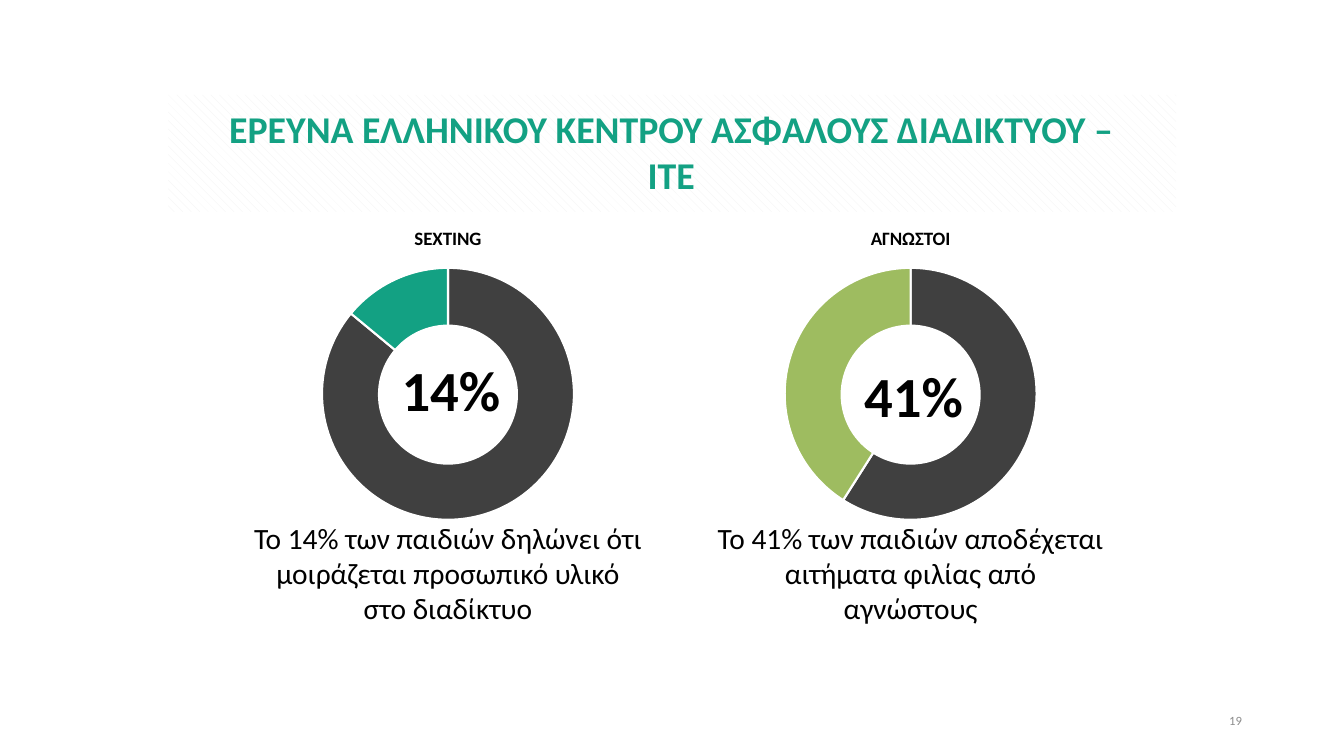
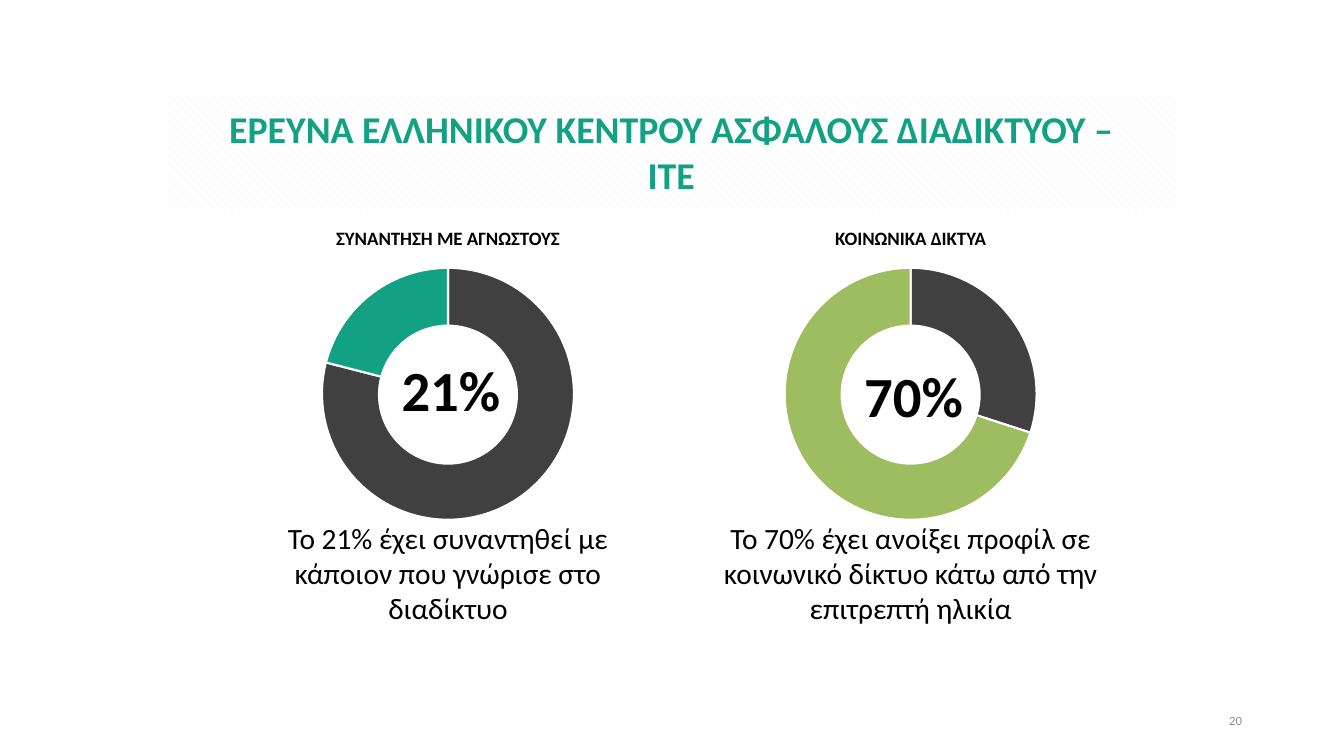
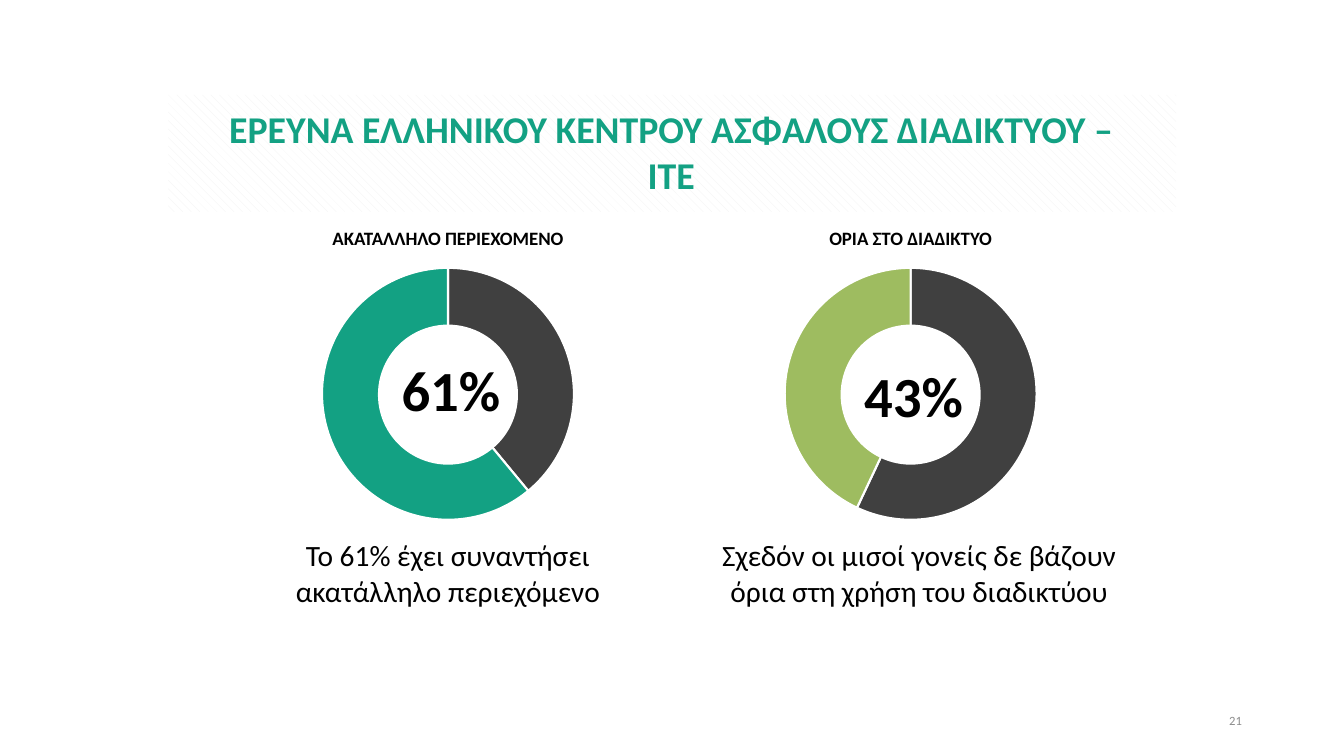
import dataclasses

import lxml.etree
import pptx
import pptx.chart.data
import pptx.dml.color
import pptx.enum.chart
import pptx.enum.dml
import pptx.enum.shapes
import pptx.enum.text
import pptx.oxml.ns
import pptx.util

Cm = pptx.util.Cm
Align = pptx.enum.text.PP_ALIGN
Anchor = pptx.enum.text.MSO_ANCHOR
Kind = pptx.enum.shapes.MSO_SHAPE

FONT = "Calibri"
BLACK, WHITE, DARK = "000000", "FFFFFF", "404040"
TEAL, GREEN, PALE, GREY = "13A183", "9EBC60", "F2F2F2", "8C8C8C"
TITLE = "ΕΡΕΥΝΑ ΕΛΛΗΝΙΚΟΥ ΚΕΝΤΡΟΥ ΑΣΦΑΛΟΥΣ ΔΙΑΔΙΚΤΥΟΥ – ΙΤΕ"
FIRST = 19
TEXT_W = 9.78
PIE_W, PIE_H, DISC, HOLE = 10.64, 7.09, 6.35, 3.53


@dataclasses.dataclass(frozen=True)
class Box:
    left: float
    top: float
    width: float
    height: float

    def place(self) -> tuple:
        return Cm(self.left), Cm(self.top), Cm(self.width), Cm(self.height)


@dataclasses.dataclass(frozen=True)
class Column:
    mid: float
    color: str
    label_top: float


@dataclasses.dataclass(frozen=True)
class Result:
    head: str
    share: int
    note: str
    lines: int = 3
    width: float = TEXT_W


COLUMNS = (Column(11.29, TEAL, 8.81), Column(22.95, GREEN, 8.97))
PAGES = (
    (Result("SEXTING", 14, "To 14% των παιδιών δηλώνει ότι μοιράζεται "
            "προσωπικό υλικό στο διαδίκτυο"),
     Result("ΑΓΝΩΣΤΟΙ", 41, "Το 41% των παιδιών αποδέχεται αιτήματα "
            "φιλίας από αγνώστους", lines=2)),
    (Result("ΣΥΝΑΝΤΗΣΗ ΜΕ ΑΓΝΩΣΤΟΥΣ", 21, "Το 21% έχει συναντηθεί με "
            "κάποιον που γνώρισε στο διαδίκτυο"),
     Result("ΚΟΙΝΩΝΙΚΑ ΔΙΚΤΥΑ", 70, "Το 70% έχει ανοίξει προφίλ σε "
            "κοινωνικό δίκτυο κάτω από την επιτρεπτή ηλικία")),
    (Result("ΑΚΑΤΑΛΛΗΛΟ ΠΕΡΙΕΧΟΜΕΝΟ", 61, "To 61% έχει συναντήσει "
            "ακατάλληλο περιεχόμενο", lines=2),
     Result("ΟΡΙΑ ΣΤΟ ΔΙΑΔΙΚΤΥΟ", 43, "Σχεδόν οι μισοί γονείς δε βάζουν "
            "όρια στη χρήση του διαδικτύου", lines=2, width=10.21)),
)


def rgb(color: str) -> pptx.dml.color.RGBColor:
    return pptx.dml.color.RGBColor.from_string(color)


def style_font(font, size: float, color: str, bold: bool = False) -> None:
    font.name, font.size, font.bold = FONT, pptx.util.Pt(size), bold
    font.color.rgb = rgb(color)


def write(shape, text: str, size: float, color: str = BLACK,
          bold: bool = False, align=Align.CENTER, anchor=Anchor.TOP,
          inset: bool = False) -> None:
    frame = shape.text_frame
    frame.text = text
    frame.word_wrap = True
    frame.auto_size = pptx.enum.text.MSO_AUTO_SIZE.NONE
    frame.vertical_anchor = anchor
    if not inset:
        frame.margin_left = frame.margin_right = 0
        frame.margin_top = frame.margin_bottom = 0
    line = frame.paragraphs[0]
    line.alignment = align
    style_font(line.font, size, color, bold)


def add_text(slide, box: Box, text: str, size: float, **style) -> None:
    write(slide.shapes.add_textbox(*box.place()), text, size, **style)


def add_plain(slide, kind, box: Box):
    """Add a shape without shadow or line and return its fill."""
    shape = slide.shapes.add_shape(kind, *box.place())
    shape.shadow.inherit = False
    shape.line.fill.background()
    return shape.fill


def fix_plot(chart) -> None:
    """Centre the pie in its frame at a fixed size."""
    tag = pptx.oxml.ns.qn
    area = chart.element.find(".//" + tag("c:plotArea"))
    for old in area.findall(tag("c:layout")):
        area.remove(old)
    layout = lxml.etree.Element(tag("c:layout"))
    area.insert(0, layout)
    manual = lxml.etree.SubElement(layout, tag("c:manualLayout"))
    wide, high = DISC / PIE_W, DISC / PIE_H
    values = {"layoutTarget": "inner", "xMode": "edge", "yMode": "edge",
              "x": (1 - wide) / 2, "y": (1 - high) / 2, "w": wide, "h": high}
    for name, value in values.items():
        lxml.etree.SubElement(manual, tag("c:" + name), val=str(value))


def add_pie(slide, column: Column, share: int) -> None:
    data = pptx.chart.data.CategoryChartData()
    data.categories = ["1", "2"]
    data.add_series("Series 1", (100 - share, share))
    box = Box(column.mid - PIE_W / 2, 6.38, PIE_W, PIE_H)
    chart = slide.shapes.add_chart(
        pptx.enum.chart.XL_CHART_TYPE.PIE, *box.place(), data).chart
    chart.has_legend = chart.has_title = False
    style_font(chart.font, 10, BLACK)
    plot = chart.plots[0]
    plot.vary_by_categories = True
    for index, color in enumerate((DARK, column.color)):
        part = plot.series[0].points[index].format
        part.fill.solid()
        part.fill.fore_color.rgb = rgb(color)
        part.line.color.rgb = rgb(WHITE)
        part.line.width = pptx.util.Pt(1.5)
    fix_plot(chart)
    fill = add_plain(slide, Kind.OVAL,
                     Box(column.mid - HOLE / 2, 8.18, HOLE, HOLE))
    fill.solid()
    fill.fore_color.rgb = rgb(WHITE)


def add_result(slide, column: Column, result: Result) -> None:
    left = column.mid - TEXT_W / 2
    add_pie(slide, column, result.share)
    high = 0.9 * result.lines
    add_text(slide, Box(left, 14.43 - high / 2, result.width, high),
             result.note, 21, anchor=Anchor.MIDDLE)
    add_text(slide, Box(left, 5.72, TEXT_W, 0.58), result.head, 13.5,
             bold=True)
    add_text(slide, Box(column.mid - 1.42, column.label_top, 3.5, 1.98),
             f"{result.share}%", 40.5, bold=True, align=Align.LEFT,
             inset=True)


def add_frame(slide, number: int) -> None:
    """Add the hatched band, the title above it and the page number."""
    fill = add_plain(slide, Kind.RECTANGLE, Box(4.24, 2.39, 25.4, 2.95))
    fill.patterned()
    fill.pattern = pptx.enum.dml.MSO_PATTERN.DASHED_DOWNWARD_DIAGONAL
    fill.fore_color.rgb, fill.back_color.rgb = rgb(PALE), rgb(WHITE)
    title = slide.shapes.title
    title.left, title.top, title.width, title.height = Box(
        5.69, 2.67, 22.45, 1.14).place()
    write(title, TITLE, 27, TEAL, bold=True)
    title.element.getparent().append(title.element)
    add_text(slide, Box(23.93, 17.65, 7.62, 1.02), str(number), 9,
             color=GREY, align=Align.RIGHT, anchor=Anchor.MIDDLE, inset=True)


def main() -> None:
    deck = pptx.Presentation()
    deck.slide_width, deck.slide_height = Cm(33.87), Cm(19.05)
    for number, results in enumerate(PAGES, FIRST):
        slide = deck.slides.add_slide(deck.slide_layouts[5])
        add_frame(slide, number)
        for column, result in zip(COLUMNS, results):
            add_result(slide, column, result)
    deck.save("out.pptx")


if __name__ == "__main__":
    main()
